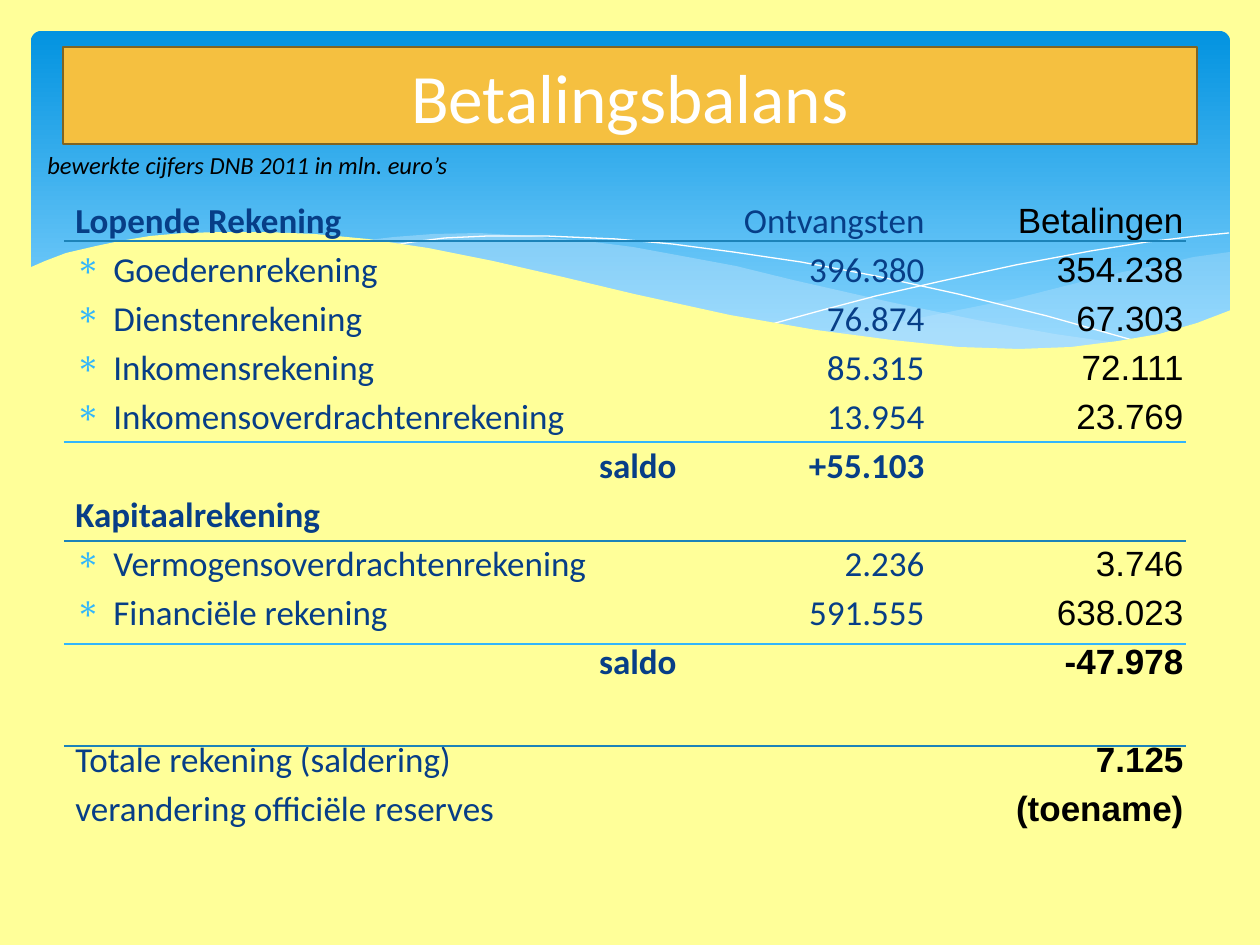
from typing import NamedTuple

import lxml.etree
import pptx
import pptx.dml.color
import pptx.enum.shapes
import pptx.enum.text
import pptx.oxml.ns
import pptx.util

EMU_PER_PX = 914400 / 126
LINE_HEIGHT, ROW_GAP = 24, 4  # points
COLORS = {
    "background": "FFFF99", "sky_top": "0293E0", "sky_bottom": "83D3FE",
    "wave": "C6E7FC", "white": "FFFFFF", "title_fill": "F5C040",
    "title_line": "806421", "navy": "073E87", "black": "000000",
    "rule": "1C83B9", "accent": "31B6FD",
}
LEFT, RIGHT = pptx.enum.text.PP_ALIGN.LEFT, pptx.enum.text.PP_ALIGN.RIGHT


class Row(NamedTuple):
    label: str = ""
    income: str = ""
    payment: str = ""
    kind: str = "plain"


class Column(NamedTuple):
    field: str
    left: int
    width: int
    font: str
    color: str
    bold_kinds: tuple[str, ...]


class Wave(NamedTuple):
    points: list[tuple[int, int]]
    fill: str = ""
    opacity: int = 100


class Rule(NamedTuple):
    y: int
    color: str
    points: float


ROWS = [
    Row("Lopende Rekening", "Ontvangsten", "Betalingen", "heading"),
    Row("Goederenrekening", "396.380", "354.238", "item"),
    Row("Dienstenrekening", "76.874", "67.303", "item"),
    Row("Inkomensrekening", "85.315", "72.111", "item"),
    Row("Inkomensoverdrachtenrekening", "13.954", "23.769", "item"),
    Row("saldo", "+55.103", "", "balance"),
    Row("Kapitaalrekening", kind="heading"),
    Row("Vermogensoverdrachtenrekening", "2.236", "3.746", "item"),
    Row("Financiële rekening", "591.555", "638.023", "item"),
    Row("saldo", "", "-47.978", "balance"),
    Row(),
    Row("Totale rekening (saldering)", "", "7.125", "total"),
    Row("verandering officiële reserves", "", "(toename)", "total"),
]
COLUMNS = [
    Column("label", 63, 626, "Calibri", "navy", ("heading", "balance")),
    Column("income", 709, 228, "Calibri", "navy", ("balance",)),
    Column("payment", 968, 228, "Arial", "black", ("balance", "total")),
]
RULES = [
    Rule(241, "rule", 1.25), Rule(541, "rule", 1.25), Rule(746, "rule", 1.25),
    Rule(442, "accent", 0.75), Rule(644, "accent", 0.75),
]
WAVES = [
    Wave([(1230, 252), (1194, 257), (1160, 265), (1123, 272), (1085, 281), (1014, 299),
          (949, 312), (890, 324), (833, 334), (871, 339), (906, 343), (954, 348),
          (1012, 350), (1063, 349), (1110, 344), (1150, 336), (1187, 326), (1213, 318),
          (1230, 311)], "wave", 29),
    Wave([(1125, 344), (1055, 334), (977, 320), (890, 302), (793, 280), (736, 266),
          (682, 256), (633, 247), (586, 241), (529, 236), (479, 233), (433, 234),
          (394, 237), (360, 241), (407, 247), (456, 256), (509, 266), (566, 280),
          (668, 302), (757, 321), (819, 333), (876, 340), (942, 348), (1003, 350),
          (1068, 349)], "wave", 40),
    Wave([(389, 246), (413, 242), (445, 238), (488, 236), (546, 236), (616, 239),
          (672, 244), (733, 252), (801, 262), (876, 276), (958, 294), (1047, 316),
          (1143, 343)]),
    Wave([(772, 324), (823, 310), (876, 296), (942, 281), (1016, 265), (1091, 251),
          (1147, 242), (1198, 236), (1229, 233)]),
    Wave([(1231, 310), (1197, 323), (1159, 334), (1118, 341), (1071, 347), (1019, 349),
          (959, 347), (892, 340), (816, 330), (730, 315), (634, 294), (563, 277),
          (493, 261), (428, 248), (368, 239), (315, 234), (266, 232), (223, 232),
          (184, 233), (150, 236), (120, 241), (96, 246), (66, 253), (45, 261),
          (29, 268), (29, 415), (1231, 415)], "background"),
]


def px(value: int) -> pptx.util.Emu:
    return pptx.util.Emu(round(value * EMU_PER_PX))


def rgb(name: str) -> pptx.dml.color.RGBColor:
    return pptx.dml.color.RGBColor.from_string(COLORS[name])


def add_child(parent, tag: str, **attributes: str):
    return lxml.etree.SubElement(parent, pptx.oxml.ns.qn(tag), attributes)


def fill_solid(fill, color: str) -> None:
    fill.solid()
    fill.fore_color.rgb = rgb(color)


def format_run(run, font: str, size: float, color: str, bold=False, italic=False) -> None:
    run.font.name, run.font.size = font, pptx.util.Pt(size)
    run.font.bold, run.font.italic = bold, italic
    run.font.color.rgb = rgb(color)


def draw_sky(slide) -> None:
    shape = slide.shapes.add_shape(
        pptx.enum.shapes.MSO_SHAPE.ROUNDED_RECTANGLE, px(31), px(31), px(1199), px(340))
    shape.adjustments[0] = 0.03
    shape.shadow.inherit = False
    shape.line.fill.background()
    shape.fill.gradient()
    shape.fill.gradient_angle = 270
    stops = (("sky_top", 0), ("sky_bottom", 0.9))
    for stop, (color, position) in zip(shape.fill.gradient_stops, stops):
        stop.color.rgb, stop.position = rgb(color), position


def draw_wave(slide, wave: Wave) -> None:
    builder = slide.shapes.build_freeform(*wave.points[0], scale=EMU_PER_PX)
    builder.add_line_segments(wave.points[1:], close=bool(wave.fill))
    shape = builder.convert_to_shape()
    shape.shadow.inherit = False
    if not wave.fill:
        shape.fill.background()
        shape.line.color.rgb = rgb("white")
        shape.line.width = 0
        return
    fill_solid(shape.fill, wave.fill)
    shape.line.fill.background()
    if wave.opacity < 100:
        color = shape.element.spPr.find(".//" + pptx.oxml.ns.qn("a:srgbClr"))
        add_child(color, "a:alpha", val=str(wave.opacity * 1000))


def format_title(slide) -> None:
    title = slide.shapes.title
    title.element.getparent().append(title.element)  # in front of the waves
    title.left, title.top, title.width, title.height = px(63), px(47), px(1134), px(97)
    fill_solid(title.fill, "title_fill")
    title.line.color.rgb = rgb("title_line")
    title.line.width = pptx.util.Pt(1.25)
    title.text_frame.text = "Betalingsbalans"
    title.text_frame.vertical_anchor = pptx.enum.text.MSO_ANCHOR.MIDDLE
    paragraph = title.text_frame.paragraphs[0]
    paragraph.alignment = pptx.enum.text.PP_ALIGN.CENTER
    format_run(paragraph.runs[0], "Calibri", 39.6, "white")


def add_bullet(paragraph) -> None:
    properties = paragraph._p.get_or_add_pPr()
    properties.set("marL", str(px(38)))
    properties.set("indent", str(-px(38)))
    add_child(add_child(properties, "a:buClr"), "a:srgbClr", val=COLORS["accent"])
    add_child(properties, "a:buChar", char="∗")


def draw_column(slide, column: Column) -> None:
    box = slide.shapes.add_textbox(px(column.left), px(192), px(column.width), px(709))
    frame = box.text_frame
    frame.word_wrap = True
    cells = [(number, row, getattr(row, column.field)) for number, row in enumerate(ROWS)]
    cells = [cell for cell in cells if cell[2]]
    previous = 0
    for number, row, text in cells:
        paragraph = frame.add_paragraph() if number else frame.paragraphs[0]
        paragraph.text = text
        is_label = column.field == "label"
        paragraph.alignment = LEFT if is_label and row.kind != "balance" else RIGHT
        paragraph.line_spacing = pptx.util.Pt(LINE_HEIGHT)
        if number:  # empty rows become extra space
            skipped = number - previous - 1
            gap = ROW_GAP + skipped * (LINE_HEIGHT + ROW_GAP)
            paragraph.space_before = pptx.util.Pt(gap)
        if is_label and row.kind == "item":
            add_bullet(paragraph)
        format_run(paragraph.runs[0], column.font, 20, column.color,
                   bold=row.kind in column.bold_kinds)
        previous = number


def draw_rule(slide, rule: Rule) -> None:
    line = slide.shapes.add_connector(
        pptx.enum.shapes.MSO_CONNECTOR.STRAIGHT, px(64), px(rule.y), px(1186), px(rule.y))
    line.line.color.rgb = rgb(rule.color)
    line.line.width = pptx.util.Pt(rule.points)
    add_child(line.element.spPr, "a:effectLst")


def draw_source_note(slide) -> None:
    box = slide.shapes.add_textbox(px(35), px(144), px(428), px(43))
    box.text_frame.text = "bewerkte cijfers DNB 2011 in mln. euro’s"
    format_run(box.text_frame.paragraphs[0].runs[0], "Calibri", 14, "black", italic=True)


def main() -> None:
    presentation = pptx.Presentation()
    presentation.slide_width, presentation.slide_height = px(1260), px(945)
    slide = presentation.slides.add_slide(presentation.slide_layouts[5])
    # Backdrop
    fill_solid(slide.background.fill, "background")
    draw_sky(slide)
    for wave in WAVES:
        draw_wave(slide, wave)
    # Title, figures and rules
    format_title(slide)
    for column in COLUMNS:
        draw_column(slide, column)
    for rule in RULES:
        draw_rule(slide, rule)
    draw_source_note(slide)
    presentation.save("out.pptx")


if __name__ == "__main__":
    main()
